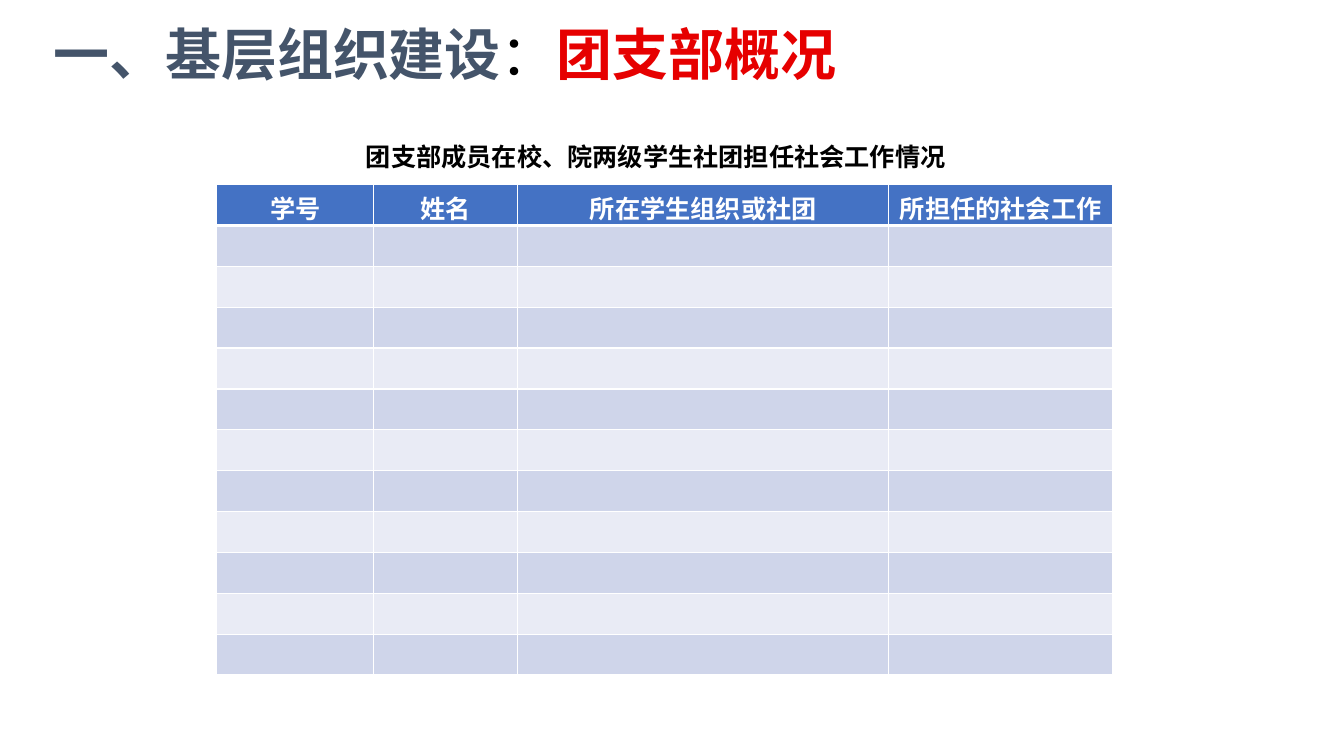
import pptx
import pptx.dml.color
import pptx.enum.text
import pptx.oxml
import pptx.oxml.ns
import pptx.util

Cm = pptx.util.Cm
Pt = pptx.util.Pt
ALIGN = pptx.enum.text.PP_ALIGN
ANCHOR = pptx.enum.text.MSO_ANCHOR
AUTOSIZE = pptx.enum.text.MSO_AUTO_SIZE


def colour(value):
    return pptx.dml.color.RGBColor.from_string(value)


class BranchSlide:
    typeface = "Noto Sans CJK SC"
    header_fill = "4472C4"
    bands = ("CFD5EA", "E9EBF5")
    rule = "FFFFFF"

    def __init__(self, deck):
        self.slide = deck.slides.add_slide(deck.slide_layouts[5])

    def style(self, font, size, value, bold=True, typeface=typeface):
        font.size = Pt(size)
        font.bold = bold
        font.name = typeface
        font.color.rgb = colour(value)
        east_asian = pptx.oxml.parse_xml(
            f'<a:ea {pptx.oxml.ns.nsdecls("a")} typeface="{self.typeface}"/>')
        font._element.find(pptx.oxml.ns.qn("a:latin")).addnext(east_asian)

    def place(self, shape, left, top, width, height):
        shape.left, shape.top = Cm(left), Cm(top)
        shape.width, shape.height = Cm(width), Cm(height)

    def title(self, parts, box):
        heading = self.slide.shapes.title
        self.place(heading, *box)
        frame = heading.text_frame
        frame.auto_size = AUTOSIZE.SHAPE_TO_FIT_TEXT
        frame.word_wrap = True
        frame.vertical_anchor = ANCHOR.MIDDLE
        line = frame.paragraphs[0]
        line.alignment = ALIGN.LEFT
        line._p.get_or_add_pPr().set("marL", str(Cm(0.25)))
        for words, value, bold, typeface in parts:
            run = line.add_run()
            run.text = words
            self.style(run.font, 40, value, bold, typeface)

    def caption(self, words, box):
        frame = self.slide.shapes.add_textbox(*map(Cm, box)).text_frame
        frame.word_wrap = False
        frame.auto_size = AUTOSIZE.SHAPE_TO_FIT_TEXT
        line = frame.paragraphs[0]
        line.text = words
        line.alignment = ALIGN.CENTER
        self.style(line.font, 18, "000000")

    def borders(self, cell, bottom):
        properties = cell._tc.get_or_add_tcPr()
        edges = (("lnL", 1), ("lnR", 1), ("lnT", 1), ("lnB", bottom))
        for position, (edge, weight) in enumerate(edges):
            properties.insert(position, pptx.oxml.parse_xml(
                f'<a:{edge} {pptx.oxml.ns.nsdecls("a")} w="{Pt(weight)}">'
                f'<a:solidFill><a:srgbClr val="{self.rule}"/></a:solidFill>'
                f'</a:{edge}>'))

    def roster(self, headings, widths, rows, left, top, row_height):
        table = self.slide.shapes.add_table(
            rows, len(headings), Cm(left), Cm(top),
            Cm(sum(widths)), Cm(rows * row_height)).table
        for column, width in zip(table.columns, widths):
            column.width = Cm(width)
        for index, row in enumerate(table.rows):
            row.height = Cm(row_height)
            for cell in row.cells:
                cell.fill.solid()
                fill = self.bands[(index - 1) % 2] if index else self.header_fill
                cell.fill.fore_color.rgb = colour(fill)
                self.borders(cell, 1 if index else 3)
        for cell, heading in zip(table.rows[0].cells, headings):
            cell.vertical_anchor = ANCHOR.MIDDLE
            cell.margin_top, cell.margin_bottom = Cm(0.12), 0
            line = cell.text_frame.paragraphs[0]
            line.text = heading
            line.alignment = ALIGN.CENTER
            self.style(line.font, 18, "FFFFFF")


def main():
    deck = pptx.Presentation()
    deck.slide_width, deck.slide_height = Cm(33.87), Cm(19.05)
    overview = BranchSlide(deck)
    overview.title(
        [("一、基层组织建设", "44546A", True, BranchSlide.typeface),
         ("：", "000000", False, BranchSlide.typeface),
         ("团支部概况", "E60000", True, "Arial")],
        (0.84, 0.36, 23.95, 1.96))
    overview.roster(
        ["学号", "姓名", "所在学生组织或社团", "所担任的社会工作"],
        [3.96, 3.63, 9.35, 5.64], 12, 5.46, 4.65, 1.03)
    overview.caption("团支部成员在校、院两级学生社团担任社会工作情况",
                     (8.89, 3.43, 15.27, 1.02))
    deck.save("out.pptx")


if __name__ == "__main__":
    main()
